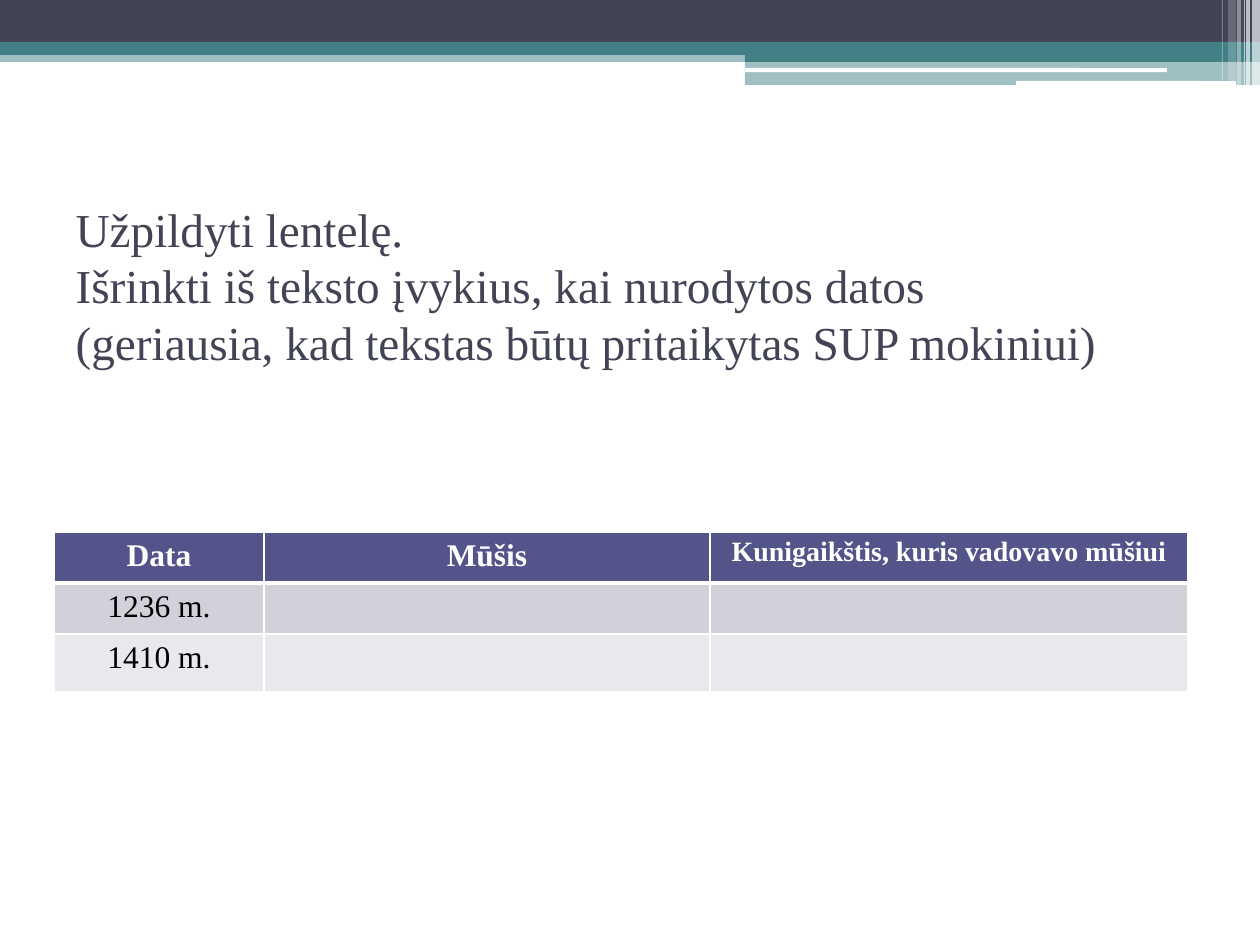
from dataclasses import dataclass

from lxml import etree
from pptx import Presentation
from pptx import util as u
from pptx.dml.color import RGBColor
from pptx.enum import shapes, text
from pptx.oxml import ns

EMU_PER_PX = 914400 / 126


@dataclass(frozen=True)
class Theme:
    font: str = "Times New Roman"
    navy: str = "424456"
    teal: str = "438086"
    white: str = "FFFFFF"
    black: str = "000000"
    header: str = "53548A"
    odd_row: str = "D1D1DA"
    even_row: str = "E9E9ED"
    title_size: int = 27
    table_size: int = 18
    long_header_size: int = 16


THEME = Theme()

# Banner parts: left, top, width, height, colour, opacity in percent
BANDS = [
    (0, 50, 1260, 12, THEME.teal, 50),
    (0, 0, 1260, 43, THEME.navy, 100),
    (0, 42, 1260, 13, THEME.teal, 100),
    (745, 49, 515, 13, THEME.teal, 100),
    (745, 61, 515, 24, THEME.teal, 50),
]
HIGHLIGHTS = [(745, 68, 422, 4), (1016, 81, 220, 5)]
# Stripes at the right edge: left, width, height, opacity
STRIPES = [
    (1252, 8, 85, 65), (1246, 4, 85, 65), (1244, 1, 85, 60),
    (1237, 4, 85, 40), (1228, 8, 81, 20), (1222, 1, 81, 30),
]

TITLE_LINES = [
    "Užpildyti lentelę.",
    "Išrinkti iš teksto įvykius, kai nurodytos datos",
    "(geriausia, kad tekstas būtų pritaikytas SUP mokiniui)",
]
BATTLES = [
    ["Data", "Mūšis", "Kunigaikštis, kuris vadovavo mūšiui"],
    ["1236 m.", "", ""],
    ["1410 m.", "", ""],
]
COLUMN_WIDTHS = [210, 446, 478]
ROW_HEIGHTS = [51, 51, 58]


def px(length):
    return u.Emu(round(length * EMU_PER_PX))


def set_attributes(target, values):
    for name, value in values.items():
        setattr(target, name, value)


def style_font(font, size, color, bold=False):
    set_attributes(font, {"name": THEME.font, "size": u.Pt(size), "bold": bold})
    font.color.rgb = RGBColor.from_string(color)


def add_bar(slide, box, color, opacity=100, kind=shapes.MSO_SHAPE.RECTANGLE):
    bar = slide.shapes.add_shape(kind, *map(px, box))
    bar.shadow.inherit = False
    bar.line.fill.background()
    bar.fill.solid()
    bar.fill.fore_color.rgb = RGBColor.from_string(color)
    if opacity < 100:
        rgb = bar.fill._xPr.find(".//" + ns.qn("a:srgbClr"))
        etree.SubElement(rgb, ns.qn("a:alpha"), val=str(opacity * 1000))


def add_banner(slide):
    for *box, color, opacity in BANDS:
        add_bar(slide, box, color, opacity)
    for box in HIGHLIGHTS:
        add_bar(slide, box, THEME.white, kind=shapes.MSO_SHAPE.ROUNDED_RECTANGLE)
    for left, width, height, opacity in STRIPES:
        add_bar(slide, (left, 0, width, height), THEME.white, opacity)


def fill_title(slide):
    title = slide.shapes.title
    set_attributes(title, {"left": px(63), "top": px(157),
                           "width": px(1134), "height": px(256)})
    frame = title.text_frame
    frame.text = "\v".join(TITLE_LINES)
    set_attributes(frame, {"word_wrap": True,
                           "auto_size": text.MSO_AUTO_SIZE.NONE,
                           "vertical_anchor": text.MSO_ANCHOR.MIDDLE})
    heading = frame.paragraphs[0]
    heading.alignment = text.PP_ALIGN.LEFT
    for run in heading.runs:
        style_font(run.font, THEME.title_size, THEME.navy)


def set_borders(cell, widths):
    properties = cell._tc.get_or_add_tcPr()
    # Borders come before the fill in a cell's properties
    for position, (side, width) in enumerate(widths.items()):
        border = etree.Element(ns.qn("a:" + side), w=str(u.Pt(width)))
        fill = etree.SubElement(border, ns.qn("a:solidFill"))
        etree.SubElement(fill, ns.qn("a:srgbClr"), val=THEME.white)
        properties.insert(position, border)


def style_cell(cell, wording, row):
    is_header = row == 0
    cell.fill.solid()
    cell.fill.fore_color.rgb = RGBColor.from_string(
        (THEME.header, THEME.odd_row, THEME.even_row)[row])
    set_borders(cell, {"lnL": 1, "lnR": 1, "lnT": 3 if row == 1 else 1,
                       "lnB": 3 if is_header else 1})
    cell.text = wording
    entry = cell.text_frame.paragraphs[0]
    entry.alignment = text.PP_ALIGN.CENTER
    style_font(entry.font, THEME.table_size,
               THEME.white if is_header else THEME.black, is_header)
    for run in entry.runs:
        style_font(run.font, THEME.table_size,
                   THEME.white if is_header else THEME.black, is_header)


def add_battle_table(slide):
    table = slide.shapes.add_table(
        len(BATTLES), len(COLUMN_WIDTHS), px(54), px(532),
        px(sum(COLUMN_WIDTHS)), px(sum(ROW_HEIGHTS))).table
    for column, width in zip(table.columns, COLUMN_WIDTHS):
        column.width = px(width)
    for row, height in zip(table.rows, ROW_HEIGHTS):
        row.height = px(height)
    for row, entries in enumerate(BATTLES):
        for column, wording in enumerate(entries):
            style_cell(table.cell(row, column), wording, row)

    # The long heading is smaller, with tight margins
    duke = table.cell(0, 2)
    set_attributes(duke, {"margin_left": px(9), "margin_right": px(9),
                          "margin_top": 0, "margin_bottom": 0})
    heading = duke.text_frame.paragraphs[0]
    heading.line_spacing = 1.15
    heading.runs[0].font.size = u.Pt(THEME.long_header_size)


def main():
    deck = Presentation()
    set_attributes(deck, {"slide_width": px(1260), "slide_height": px(945)})
    slide = deck.slides.add_slide(deck.slide_layouts[5])
    add_banner(slide)
    fill_title(slide)
    add_battle_table(slide)
    deck.save("out.pptx")


if __name__ == "__main__":
    main()
